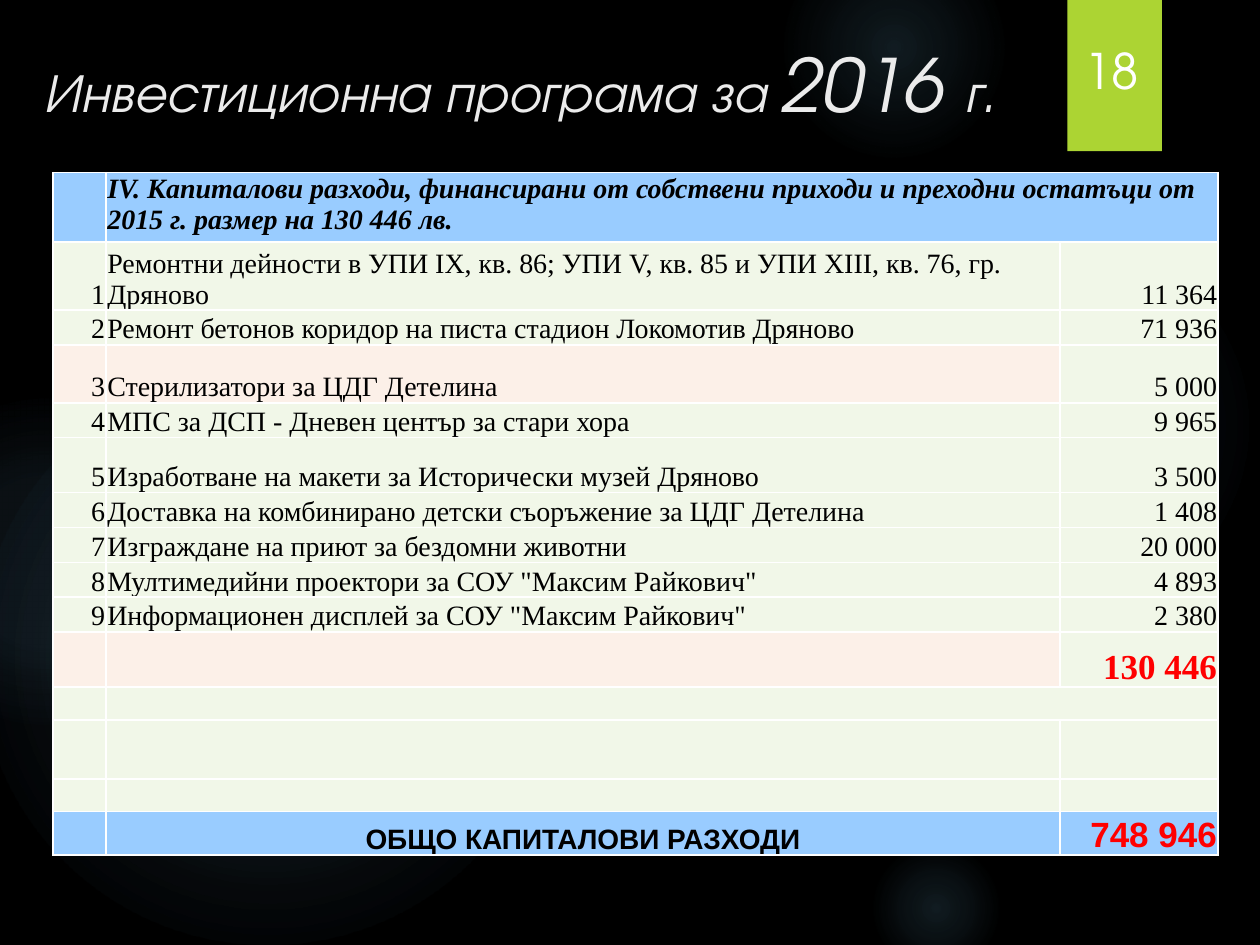
import pptx
import pptx.dml.color
import pptx.enum.shapes
import pptx.enum.text
import pptx.oxml
import pptx.oxml.ns
import pptx.util

Pt = pptx.util.Pt
SHAPE = pptx.enum.shapes.MSO_SHAPE
ALIGN = pptx.enum.text.PP_ALIGN
ANCHOR = pptx.enum.text.MSO_ANCHOR
NS = pptx.oxml.ns.nsdecls("a")

HEAD_FONT, BODY_FONT, TOTAL_FONT = "TeX Gyre Adventor", "Times New Roman", "Arial"
BLUE, GREEN, PINK, RED, BLACK = "99CCFF", "F1F7E8", "FCF0E8", "FF0000", "000000"

GLOWS = [
    (496, 132, 222, [(0, 7), (36, 6), (69, 0)]),
    (448, -36, 126, [(0, 14), (36, 7), (73, 0)]),
    (496, 480, 78, [(0, 14), (36, 7), (66, 0)]),
    (-12, 210, 330, [(0, 11), (36, 10), (75, 0)]),
    (-66, 228, 186, [(0, 8), (36, 8), (72, 0)]),
]
HEADING = ("IV. Капиталови разходи, финансирани от собствени приходи и преходни "
           "остатъци от 2015 г. размер на 130 446 лв.")
ITEMS = [
    ("Ремонтни дейности в УПИ ІХ, кв. 86; УПИ V, кв. 85 и УПИ ХІІІ, кв. 76, гр. Дряново", "11 364"),
    ("Ремонт бетонов коридор на писта стадион Локомотив Дряново", "71 936"),
    ("Стерилизатори за ЦДГ Детелина", "5 000"),
    ("МПС за ДСП - Дневен център за стари хора", "9 965"),
    ("Изработване на макети за Исторически музей Дряново", "3 500"),
    ("Доставка на комбинирано детски съоръжение за ЦДГ Детелина", "1 408"),
    ("Изграждане на приют за бездомни животни", "20 000"),
    ('Мултимедийни проектори за СОУ "Максим Райкович"', "4 893"),
    ('Информационен дисплей за СОУ "Максим Райкович"', "2 380"),
]
COL_WIDTHS = [30.5, 545, 90.5]
ROW_HEIGHTS = [39.6, 16, 19.4, 33, 16, 31.5, 16, 16, 16, 18.7, 31.5, 18.7, 33.8, 18.7, 18.7]
PINK_ROWS = (3, 10)


def color(value):
    """Return the RGB colour of a hex string."""
    return pptx.dml.color.RGBColor.from_string(value)


def style(r, size, font, fill, bold=False, italic=False):
    """Format one run."""
    r.font.size, r.font.name = Pt(size), font
    r.font.bold, r.font.italic = bold, italic
    r.font.color.rgb = color(fill)


def add_glow(slide, left, top, size, stops):
    """Add a circle that fades out from its centre."""
    sp = slide.shapes.add_shape(SHAPE.OVAL, Pt(left), Pt(top), Pt(size), Pt(size))
    sp.shadow.inherit = False
    sp.line.fill.background()
    sp.fill.background()
    marks = "".join(
        f'<a:gs pos="{pos * 1000}"><a:srgbClr val="7AC4F0">'
        f'<a:alpha val="{alpha * 1000}"/></a:srgbClr></a:gs>' for pos, alpha in stops)
    grad = pptx.oxml.parse_xml(
        f'<a:gradFill {NS} rotWithShape="1"><a:gsLst>{marks}</a:gsLst><a:path path="circle">'
        '<a:fillToRect l="50000" t="50000" r="50000" b="50000"/></a:path></a:gradFill>')
    pr = sp._element.spPr
    pr.replace(pr.find(pptx.oxml.ns.qn("a:noFill")), grad)


def add_tab(slide):
    """Add the green tab behind the page number."""
    sp = slide.shapes.add_shape(SHAPE.RECTANGLE, Pt(610), Pt(0), Pt(54), Pt(86.4))
    sp.shadow.inherit = False
    sp.fill.solid()
    sp.fill.fore_color.rgb = color("ACD433")
    sp.line.fill.background()


def add_text(slide, box, runs, fill, anchor, align=ALIGN.LEFT, italic=False):
    """Add a one-line text box from (text, size) pairs."""
    tf = slide.shapes.add_textbox(*map(Pt, box)).text_frame
    tf.word_wrap = True
    tf.vertical_anchor = anchor
    p = tf.paragraphs[0]
    p.alignment = align
    for text, size in runs:
        r = p.add_run()
        r.text = text
        style(r, size, HEAD_FONT, fill, italic=italic)


def add_borders(cell):
    """Draw thin white lines around a cell."""
    pr = cell._tc.get_or_add_tcPr()
    for i, side in enumerate(("lnL", "lnR", "lnT", "lnB")):
        pr.insert(i, pptx.oxml.parse_xml(
            f'<a:{side} {NS} w="12700"><a:solidFill><a:srgbClr val="FFFFFF"/>'
            f'</a:solidFill></a:{side}>'))


def prepare_cell(cell, fill):
    """Give a cell its fill, borders, narrow margins and a small empty line."""
    cell.margin_left = cell.margin_right = cell.margin_top = Pt(0.7)
    cell.margin_bottom = Pt(0)
    cell.fill.solid()
    cell.fill.fore_color.rgb = color(fill)
    add_borders(cell)
    p = cell.text_frame.paragraphs[0]
    p._p.append(pptx.oxml.parse_xml(f'<a:endParaRPr {NS} sz="1200"/>'))


def write_cell(cell, text, align=ALIGN.LEFT, anchor=ANCHOR.BOTTOM, size=16,
               font=BODY_FONT, fill=BLACK, bold=False, italic=False):
    """Put formatted text in a cell."""
    cell.vertical_anchor = anchor
    p = cell.text_frame.paragraphs[0]
    p.text = text
    p.alignment = align
    style(p.runs[0], size, font, fill, bold, italic)


def row_fill(row, col):
    """Return the fill of a table cell."""
    if row in (0, len(ROW_HEIGHTS) - 1):
        return BLUE
    return PINK if row in PINK_ROWS and col < 2 else GREEN


def add_budget_table(slide):
    """Add the table of capital expenses with its totals."""
    rows, cols = len(ROW_HEIGHTS), len(COL_WIDTHS)
    table = slide.shapes.add_table(rows, cols, Pt(30.2), Pt(98.6), Pt(sum(COL_WIDTHS)),
                                   Pt(sum(ROW_HEIGHTS))).table
    for col, width in enumerate(COL_WIDTHS):
        table.columns[col].width = Pt(width)
    for row, height in enumerate(ROW_HEIGHTS):
        table.rows[row].height = Pt(height)
        for col in range(cols):
            prepare_cell(table.cell(row, col), row_fill(row, col))
    for row in (0, 11):
        table.cell(row, 1).merge(table.cell(row, 2))
    write_cell(table.cell(0, 1), HEADING, anchor=ANCHOR.TOP, bold=True, italic=True)
    for row, (name, amount) in enumerate(ITEMS, 1):
        write_cell(table.cell(row, 0), str(row), ALIGN.RIGHT)
        write_cell(table.cell(row, 1), name)
        write_cell(table.cell(row, 2), amount, ALIGN.RIGHT)
    write_cell(table.cell(10, 2), "130 446", ALIGN.RIGHT, size=20, fill=RED, bold=True)
    write_cell(table.cell(14, 1), "ОБЩО КАПИТАЛОВИ РАЗХОДИ", ALIGN.CENTER,
               font=TOTAL_FONT, bold=True)
    write_cell(table.cell(14, 2), "748 946", ALIGN.RIGHT, size=20, font=TOTAL_FONT,
               fill=RED, bold=True)


def main():
    """Build and save the slide."""
    prs = pptx.Presentation()
    prs.slide_width, prs.slide_height = Pt(720), Pt(540)
    slide = prs.slides.add_slide(prs.slide_layouts[6])
    slide.background.fill.solid()
    slide.background.fill.fore_color.rgb = color(BLACK)
    for glow in GLOWS:
        add_glow(slide, *glow)
    add_tab(slide)
    add_text(slide, (18, 16, 648, 62.6),
             [("Инвестиционна програма за ", 31), ("2016 ", 42), ("г.", 31)],
             "EBEBEB", ANCHOR.MIDDLE, italic=True)
    add_text(slide, (551, 23, 168, 37.4), [("18", 28)], "FFFFFF", ANCHOR.BOTTOM, ALIGN.CENTER)
    add_budget_table(slide)
    prs.save("out.pptx")


if __name__ == "__main__":
    main()
